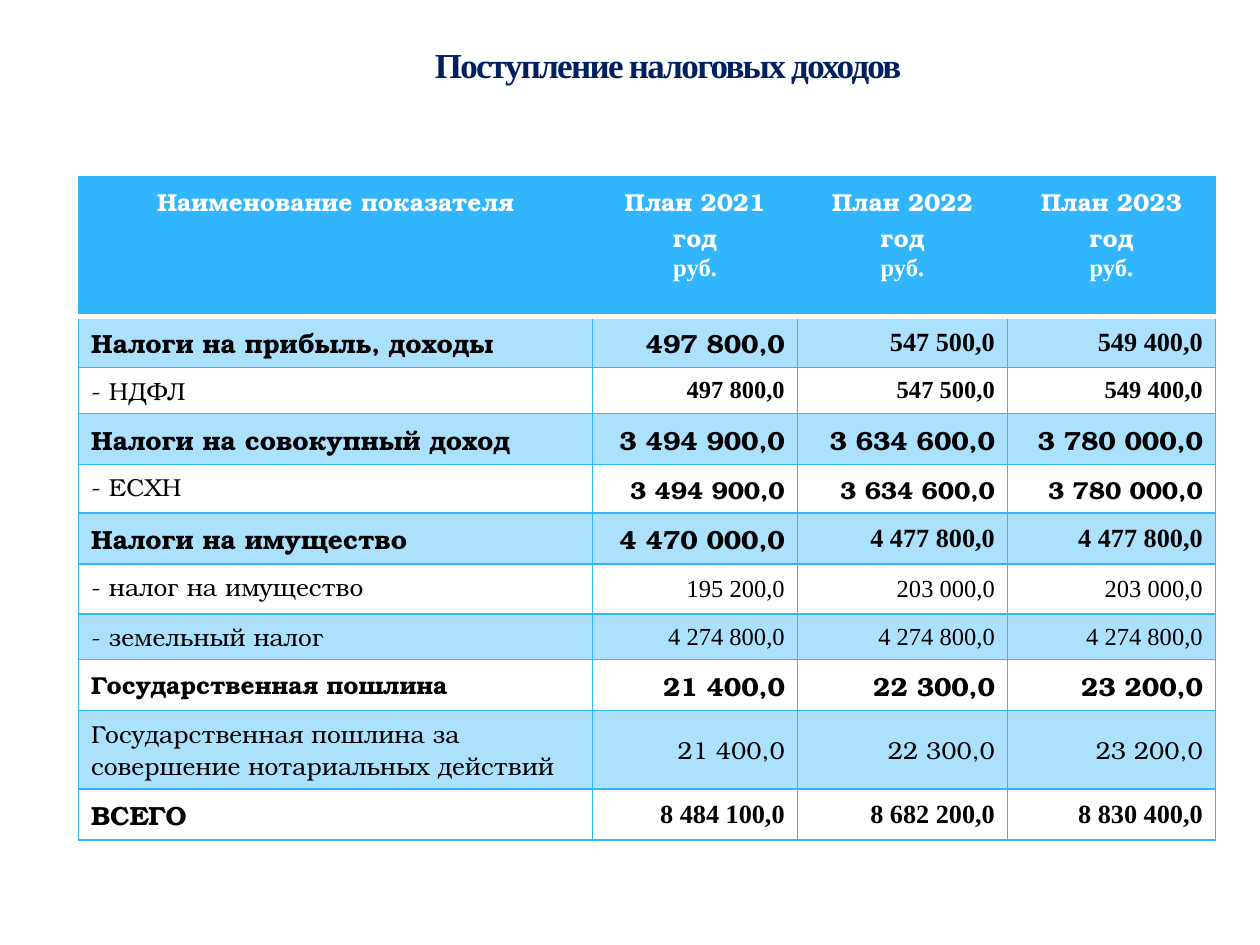
from dataclasses import dataclass

from lxml.etree import SubElement
from pptx import Presentation
from pptx.dml.color import RGBColor
from pptx.enum.text import MSO_ANCHOR as ANCHOR, PP_ALIGN as ALIGN
from pptx.oxml.ns import qn
from pptx.util import Pt


@dataclass(frozen=True)
class Theme:
    accent: str = "31B6FD"
    white: str = "FFFFFF"
    black: str = "000000"
    navy: str = "002060"
    glow: str = "AFCCDE"
    serif: str = "Times New Roman"
    book: str = "TeX Gyre Bonum"
    title: int = 20
    large: int = 15
    body: int = 14
    band_alpha: int = 40000


T = Theme()
B, S = T.book, T.serif
LG, MD = T.large, T.body

YEARS = (2021, 2022, 2023)
COL_WIDTHS = (293.8, 117, 120.1, 118.8)
HEADER_HEIGHT = 80

# label, (label size, bold), values, (value size, bold), value fonts, row height
ROWS = [
    ("Налоги на прибыль, доходы", (LG, True),
     ("497 800,0", "547 500,0", "549 400,0"), (LG, True), (B, S, S), 28.6),
    ("- НДФЛ", (MD, False),
     ("497 800,0", "547 500,0", "549 400,0"), (MD, True), (S, S, S), 26.2),
    ("Налоги на совокупный доход", (LG, True),
     ("3 494 900,0", "3 634 600,0", "3 780 000,0"), (LG, True), (B, B, B), 29),
    ("- ЕСХН", (MD, False),
     ("3 494 900,0", "3 634 600,0", "3 780 000,0"), (MD, True), (B, B, B), 27.8),
    ("Налоги на имущество", (LG, True),
     ("4 470 000,0", "4 477 800,0", "4 477 800,0"), (LG, True), (B, S, S), 29),
    ("- налог на имущество", (MD, False),
     ("195 200,0", "203 000,0", "203 000,0"), (MD, False), (S, S, S), 28.6),
    ("- земельный налог", (MD, False),
     ("4 274 800,0", "4 274 800,0", "4 274 800,0"), (MD, False), (S, S, S), 26.2),
    ("Государственная пошлина", (MD, True),
     ("21 400,0", "22 300,0", "23 200,0"), (LG, True), (B, B, B), 29),
    ("Государственная пошлина за совершение нотариальных действий", (MD, False),
     ("21 400,0", "22 300,0", "23 200,0"), (MD, False), (B, B, B), 44.8),
    ("ВСЕГО", (LG, True),
     ("8 484 100,0", "8 682 200,0", "8 830 400,0"), (LG, True), (S, S, S), 29),
]


def add_run(p, text, color, **fmt):
    r = p.add_run()
    r.text = text
    for name, value in fmt.items():
        setattr(r.font, name, value)
    r.font.color.rgb = RGBColor.from_string(color)
    return r


def add_color(parent, color, alpha=None):
    clr = SubElement(SubElement(parent, qn("a:solidFill")), qn("a:srgbClr"), val=color)
    if alpha:
        SubElement(clr, qn("a:alpha"), val=str(alpha))


def format_cell(cell, fill=None, alpha=None, top=None, bottom=None):
    """Set borders first, then the fill, as the schema orders them."""
    pr = cell._tc.get_or_add_tcPr()
    thin = (T.accent, 1)
    for side, line in zip("LRTB", (thin, thin, top or thin, bottom or thin)):
        color, width = line
        ln = SubElement(pr, qn(f"a:ln{side}"), w=str(Pt(width)))
        add_color(ln, color)
    if fill:
        add_color(pr, fill, alpha)
    else:
        SubElement(pr, qn("a:noFill"))


def fill_header(cells, rule):
    texts = ["Наименование показателя"] + [f"План {year} год" for year in YEARS]
    for col, (cell, text) in enumerate(zip(cells, texts)):
        tf = cell.text_frame
        lines = [(tf.paragraphs[0], text, B)]
        if col:
            lines.append((tf.add_paragraph(), "руб.", S))
        for p, line, font in lines:
            p.alignment = ALIGN.CENTER
            add_run(p, line, T.white, name=font, size=Pt(MD), bold=True)
        format_cell(cell, T.accent, bottom=rule)


def fill_row(cells, row, banded, top):
    label, label_style, values, value_style, fonts, _ = row
    parts = [(label, B, label_style)]
    parts += [(value, font, value_style) for value, font in zip(values, fonts)]
    for col, (cell, (text, font, (size, bold))) in enumerate(zip(cells, parts)):
        p = cell.text_frame.paragraphs[0]
        p.alignment = ALIGN.RIGHT if col else ALIGN.LEFT
        if col:
            cell.vertical_anchor = ANCHOR.MIDDLE
        add_run(p, text, T.black, name=font, size=Pt(size), bold=bold)
        format_cell(cell, T.accent if banded else None, T.band_alpha, top=top)


def add_revenue_table(slide, left, top):
    heights = [HEADER_HEIGHT] + [row[-1] for row in ROWS]
    frame = slide.shapes.add_table(len(heights), len(COL_WIDTHS), Pt(left), Pt(top),
                                   Pt(sum(COL_WIDTHS)), Pt(sum(heights)))
    table = frame.table
    table.horz_banding = False
    for column, width in zip(table.columns, COL_WIDTHS):
        column.width = Pt(width)
    for row, height in zip(table.rows, heights):
        row.height = Pt(height)

    rule = (T.white, 3)
    fill_header(table.rows[0].cells, rule)
    for i, row in enumerate(ROWS):
        fill_row(table.rows[i + 1].cells, row, i % 2 == 0, None if i else rule)


def set_title(slide, text, left, top, width, height):
    sp = slide.shapes.title
    box = dict(left=left, top=top, width=width, height=height)
    for name, value in box.items():
        setattr(sp, name, Pt(value))
    tf = sp.text_frame
    tf.word_wrap, tf.vertical_anchor = True, ANCHOR.MIDDLE
    p = tf.paragraphs[0]
    p.alignment = ALIGN.CENTER
    r = add_run(p, text, T.navy, name=S, size=Pt(T.title), bold=True)
    pr = r.font._element
    pr.set("spc", "-100")
    ln = SubElement(pr, qn("a:ln"), w=str(Pt(0.25)))
    add_color(ln, T.glow, 25000)
    pr.insert(0, ln)


def main():
    prs = Presentation()
    prs.slide_width, prs.slide_height = Pt(720), Pt(540)
    slide = prs.slides.add_slide(prs.slide_layouts[5])
    add_revenue_table(slide, 44.9, 101)
    set_title(slide, "Поступление налоговых доходов", 118.2, 17, 527, 39.6)
    prs.save("out.pptx")


if __name__ == "__main__":
    main()
